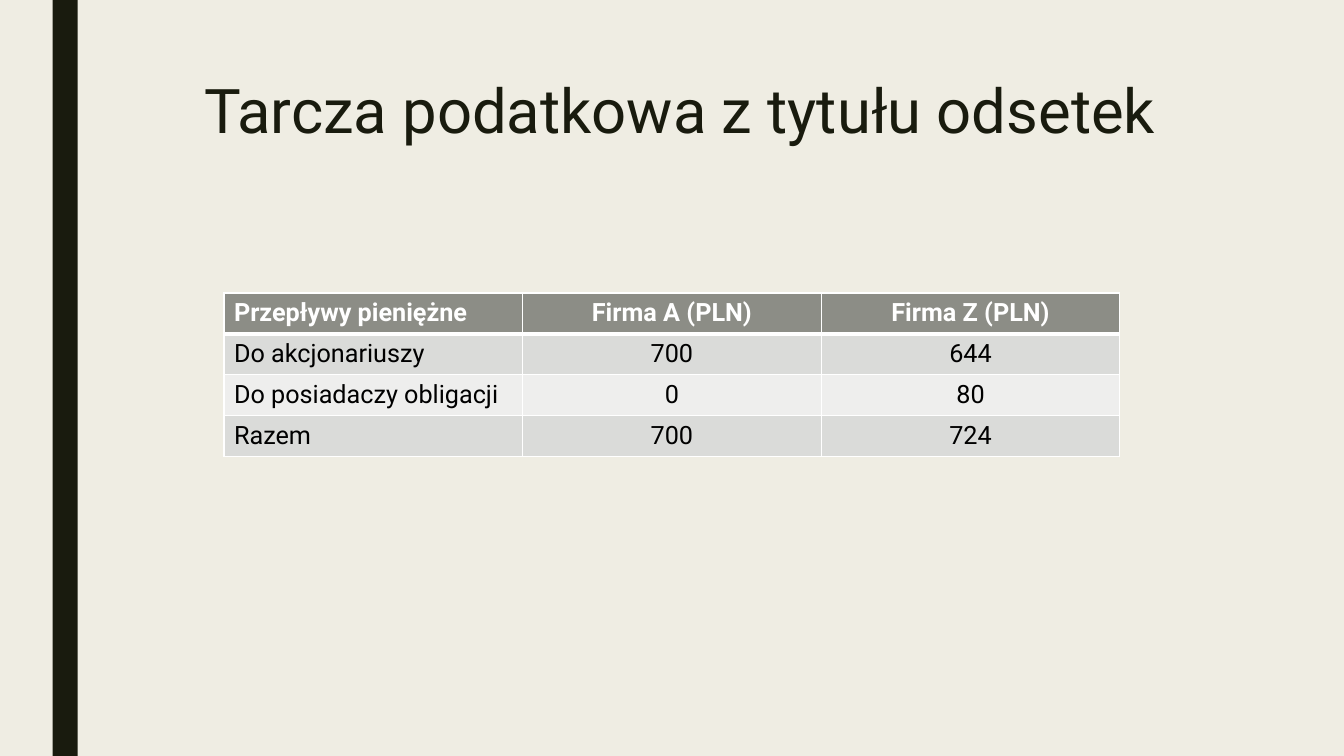
from lxml.etree import SubElement
from pptx import Presentation
from pptx.dml.color import RGBColor
from pptx.enum.shapes import MSO_SHAPE
from pptx.enum.text import MSO_ANCHOR, PP_ALIGN
from pptx.oxml.ns import qn
from pptx.util import Pt

FONT = "Roboto"
PAPER, INK, WHITE, BLACK = "EFEDE3", "191B0E", "FFFFFF", "000000"
HEADER_FILL, BAND_FILLS = "8C8D86", ("DADBD9", "EEEEED")
CASH_FLOWS = [
    ("Przepływy pieniężne", "Firma A (PLN)", "Firma Z (PLN)"),
    ("Do akcjonariuszy", "700", "644"),
    ("Do posiadaczy obligacji", "0", "80"),
    ("Razem", "700", "724"),
]


def paint(fill, color):
    """Apply a solid hex colour to a fill."""
    fill.solid()
    fill.fore_color.rgb = RGBColor.from_string(color)


def write(frame, text, size=18, color=BLACK, bold=False, align=PP_ALIGN.LEFT, spacing=1.0):
    """Write one formatted paragraph into a text frame."""
    paragraph = frame.paragraphs[0]
    paragraph.alignment = align
    paragraph.line_spacing = spacing
    run = paragraph.add_run()
    run.text = text
    run.font.name = FONT
    run.font.size = Pt(size)
    run.font.bold = bold
    paint(run.font.fill, color)


def add_stripe(slide, left, width, height):
    """Draw the dark vertical stripe at the slide's left side."""
    stripe = slide.shapes.add_shape(MSO_SHAPE.RECTANGLE, Pt(left), Pt(0), Pt(width), Pt(height))
    stripe.shadow.inherit = False
    paint(stripe.fill, INK)
    stripe.line.fill.background()


def add_title(slide, text, left, top, width, height):
    """Place the centred slide title."""
    title = slide.shapes.add_textbox(Pt(left), Pt(top), Pt(width), Pt(height)).text_frame
    title.word_wrap = True
    title.vertical_anchor = MSO_ANCHOR.TOP
    write(title, text, size=44, color=INK, align=PP_ALIGN.CENTER, spacing=0.89)


def border(cell, top, bottom):
    """Outline a cell in white with the given top and bottom widths in points."""
    properties = cell._tc.get_or_add_tcPr()
    for side, width in (("L", 1), ("R", 1), ("T", top), ("B", bottom)):
        edge = SubElement(properties, qn(f"a:ln{side}"), w=str(Pt(width)))
        solid = SubElement(edge, qn("a:solidFill"))
        SubElement(solid, qn("a:srgbClr"), val=WHITE)


def add_cash_flow_table(slide, rows, left, top, column_width, row_height):
    """Build the banded table with a bold header row."""
    columns = len(rows[0])
    table = slide.shapes.add_table(
        len(rows), columns, Pt(left), Pt(top),
        Pt(column_width * columns), Pt(row_height * len(rows)),
    ).table
    for column in table.columns:
        column.width = Pt(column_width)
    for r, values in enumerate(rows):
        table.rows[r].height = Pt(row_height)
        header = r == 0
        for c, value in enumerate(values):
            cell = table.cell(r, c)
            border(cell, top=3 if r == 1 else 1, bottom=3 if header else 1)
            paint(cell.fill, HEADER_FILL if header else BAND_FILLS[(r - 1) % 2])
            write(cell.text_frame, value, bold=header, color=WHITE if header else BLACK,
                  align=PP_ALIGN.CENTER if c else PP_ALIGN.LEFT)


def main():
    """Build and save the slide."""
    deck = Presentation()
    deck.slide_width, deck.slide_height = Pt(960), Pt(540)
    slide = deck.slides.add_slide(deck.slide_layouts[6])
    paint(slide.background.fill, PAPER)
    add_stripe(slide, 37.5, 18, 540)
    add_title(slide, "Tarcza podatkowa z tytułu odsetek", 108, 54, 756, 117)
    add_cash_flow_table(slide, CASH_FLOWS, 160, 209.3, 213.33, 29.2)
    deck.save("out.pptx")


if __name__ == "__main__":
    main()
